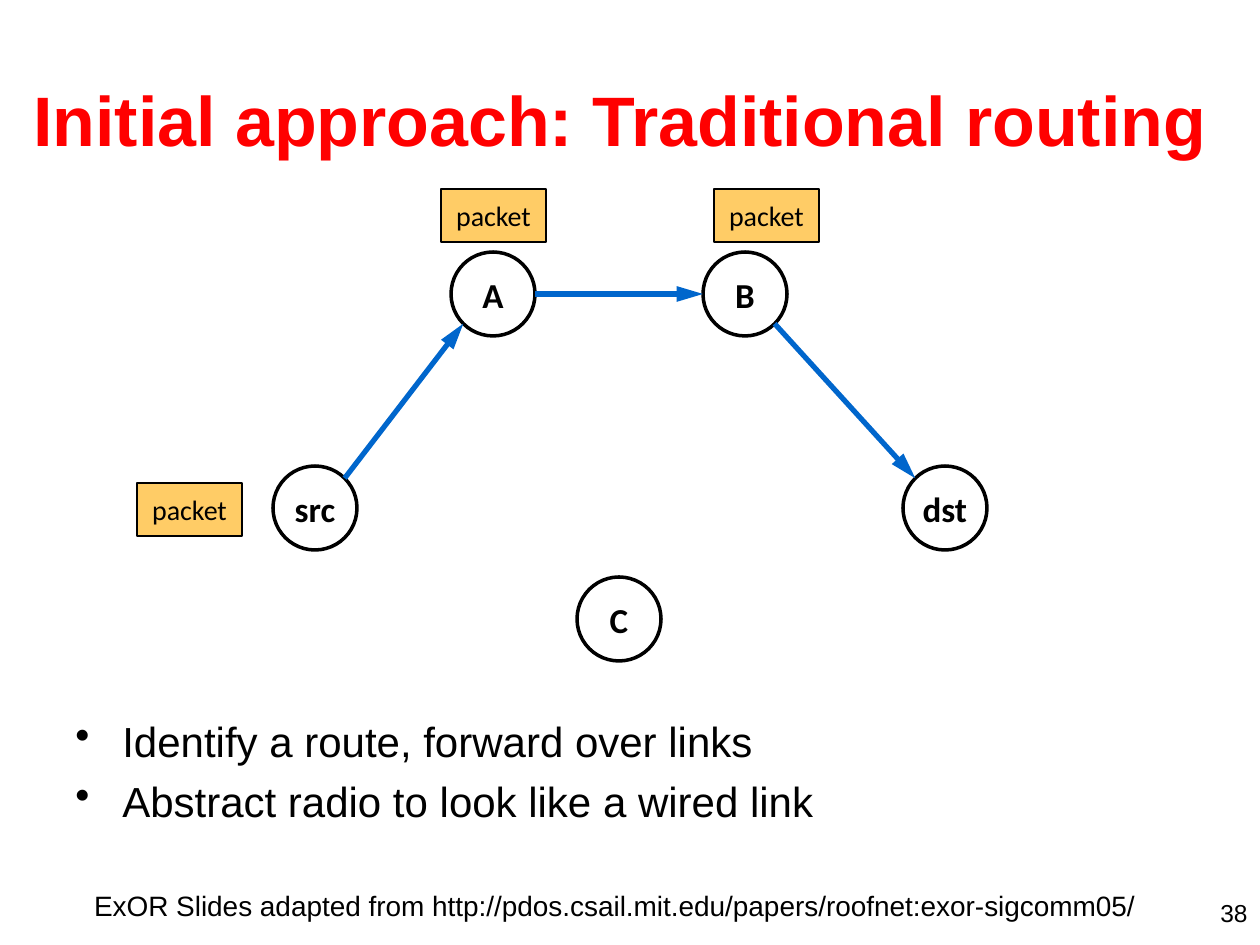
import math

import pptx
import pptx.dml.color
import pptx.enum.shapes
import pptx.enum.text
import pptx.oxml.ns
import pptx.util
from lxml import etree

RGBColor = pptx.dml.color.RGBColor
ALIGN = pptx.enum.text.PP_ALIGN
ANCHOR = pptx.enum.text.MSO_ANCHOR
SHAPE = pptx.enum.shapes.MSO_SHAPE

BLACK = RGBColor(0x00, 0x00, 0x00)
RED = RGBColor(0xFF, 0x00, 0x00)
ORANGE = RGBColor(0xFF, 0xCC, 0x66)
BLUE = RGBColor(0x00, 0x66, 0xCC)

SCALE = 914400 / 126
RADIUS = 42
NODES = {
    "src": (315, 508),
    "A": (493, 294),
    "B": (745, 294),
    "dst": (945, 508),
    "C": (619, 619),
}
HOPS = [("src", "A", -45), ("A", "B", 0), ("B", "dst", 45)]
PACKETS = [(441, 189), (137, 483), (714, 189)]


def px(*lengths):
    return [pptx.util.Emu(round(length * SCALE)) for length in lengths]


def write(frame, text, size, font="Arial", color=BLACK, bold=False, align=ALIGN.LEFT):
    frame.text = text
    for paragraph in frame.paragraphs:
        paragraph.alignment = align
        for run in paragraph.runs:
            run.font.name = font
            run.font.size = pptx.util.Pt(size)
            run.font.bold = bold
            run.font.color.rgb = color


def add_text(slide, box, text, size, anchor=ANCHOR.TOP, **style):
    frame = slide.shapes.add_textbox(*px(*box)).text_frame
    frame.word_wrap = True
    frame.vertical_anchor = anchor
    write(frame, text, size, **style)
    return frame


def add_bullets(slide, box, lines, size):
    frame = add_text(slide, box, "\n".join(lines), size)
    indent = px(47)[0]
    for paragraph in frame.paragraphs:
        paragraph.space_before = pptx.util.Pt(5.5)
        properties = paragraph._p.get_or_add_pPr()
        properties.set("marL", str(indent))
        properties.set("indent", str(-indent))
        bullet = etree.SubElement(properties, pptx.oxml.ns.qn("a:buChar"))
        bullet.set("char", "•")


def add_label_shape(slide, kind, box, text, size, line_width, fill=None, bold=False):
    shape = slide.shapes.add_shape(kind, *px(*box))
    shape.shadow.inherit = False
    if fill is None:
        shape.fill.background()
    else:
        shape.fill.solid()
        shape.fill.fore_color.rgb = fill
    shape.line.color.rgb = BLACK
    shape.line.width = pptx.util.Pt(line_width)
    shape.text_frame.word_wrap = False
    shape.text_frame.vertical_anchor = ANCHOR.MIDDLE
    write(shape.text_frame, text, size, font="Calibri", bold=bold, align=ALIGN.CENTER)


def add_packet(slide, left, top):
    add_label_shape(slide, SHAPE.RECTANGLE, (left, top, 105, 53), "packet", 16, 0.75, ORANGE)


def add_node(slide, name):
    x, y = NODES[name]
    box = (x - RADIUS, y - RADIUS, 2 * RADIUS, 2 * RADIUS)
    add_label_shape(slide, SHAPE.OVAL, box, name, 20, 2, bold=True)


def add_hop(slide, sender, receiver, angle):
    dx = RADIUS * math.cos(math.radians(angle))
    dy = RADIUS * math.sin(math.radians(angle))
    (x1, y1), (x2, y2) = NODES[sender], NODES[receiver]
    hop = slide.shapes.add_connector(
        pptx.enum.shapes.MSO_CONNECTOR.STRAIGHT,
        *px(x1 + dx, y1 + dy, x2 - dx, y2 - dy),
    )
    hop.line.color.rgb = BLUE
    hop.line.width = pptx.util.Pt(3)
    arrowhead = etree.SubElement(hop.line._get_or_add_ln(), pptx.oxml.ns.qn("a:tailEnd"))
    arrowhead.set("type", "triangle")
    arrowhead.set("w", "med")
    arrowhead.set("len", "lg")
    etree.SubElement(hop._element.spPr, pptx.oxml.ns.qn("a:effectLst"))


def main():
    presentation = pptx.Presentation()
    presentation.slide_width, presentation.slide_height = px(1260, 945)
    slide = presentation.slides.add_slide(presentation.slide_layouts[6])

    add_text(slide, (21, 40, 1207, 158), "Initial approach: Traditional routing", 40,
             anchor=ANCHOR.MIDDLE, color=RED, bold=True)
    add_bullets(slide, (63, 709, 1134, 173),
                ["Identify a route, forward over links",
                 "Abstract radio to look like a wired link"], 24)
    add_text(slide, (966, 892, 294, 32), "38", 14, align=ALIGN.RIGHT)
    for left, top in PACKETS:
        add_packet(slide, left, top)
    for name in NODES:
        add_node(slide, name)
    for sender, receiver, angle in HOPS:
        add_hop(slide, sender, receiver, angle)
    add_text(slide, (53, 882, 1124, 46),
             "ExOR Slides adapted from http://pdos.csail.mit.edu/papers/roofnet:exor-sigcomm05/",
             16, align=ALIGN.CENTER)

    presentation.save("out.pptx")


if __name__ == "__main__":
    main()
